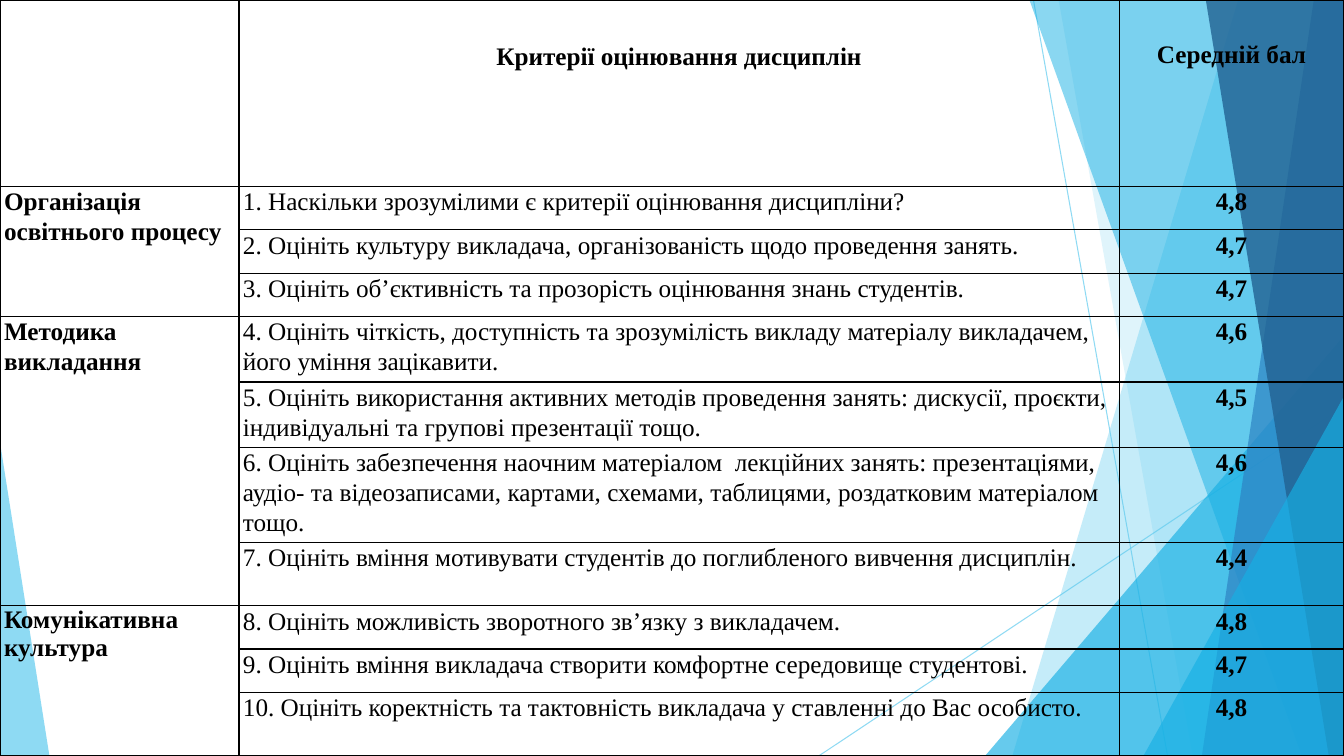
"""Build a slide with a table of average scores for teaching criteria."""
from lxml.etree import SubElement
from pptx import Presentation
from pptx.dml.color import RGBColor
from pptx.enum.shapes import MSO_CONNECTOR, MSO_SHAPE
from pptx.enum.text import PP_ALIGN
from pptx.oxml import parse_xml
from pptx.oxml.ns import nsdecls, qn
from pptx.util import Pt

PX = 9144
WIDE, HIGH = 1333, 750
THEME = {
    "font": "Times New Roman", "size": Pt(18), "ink": "000000",
    "sky": "5FCBEF", "cyan": "17B0E4", "blue": "2E83C3", "navy": "226292",
}


def tint(part, fill, tone, alpha):
    fill.solid()
    fill.fore_color.rgb = RGBColor.from_string(THEME[tone])
    for color in part._element.iter(qn("a:srgbClr")):
        SubElement(color, qn("a:alpha"), val=str(alpha * 1000))


def write(cell, lines, bold=False, align=PP_ALIGN.LEFT, top=0, pitch=1.07, after=8):
    cell.margin_left = cell.margin_right = 4 * PX
    cell.margin_top, cell.margin_bottom = top * PX, 0
    cell.text = "\n".join(lines)
    paras = cell.text_frame.paragraphs
    for para in paras:
        para.alignment, para.line_spacing = align, pitch
        para.space_after = Pt(after if para is paras[-1] else 0)
        para.font.name, para.font.size = THEME["font"], THEME["size"]
        para.font.bold = bold
        para.font.color.rgb = RGBColor.from_string(THEME["ink"])


deck = Presentation()
deck.slide_width, deck.slide_height = WIDE * PX, HIGH * PX
slide = deck.slides.add_slide(deck.slide_layouts[6])
shapes = slide.shapes

for ends in [(1025, 0, 1158, HIGH), (WIDE, 403, 812, HIGH)]:
    line = shapes.add_connector(MSO_CONNECTOR.STRAIGHT, *[n * PX for n in ends])
    line.line.width = Pt(0.75)
    tint(line, line.line.fill, "sky", 70)
    SubElement(line._element.spPr, qn("a:effectLst"))

facets = [
    ("wedge", (1228, 1004), "sky", 36),
    ("wedge", (1050, 1183), "sky", 20),
    ("peak", (977, 333, 356, 1), "cyan", 66),
    ("wedge", (1021, 1291), "cyan", 50),
    ("wedge", (1303, 1192), "blue", 70),
    ("wedge", (1196, 1318), "navy", 80),
    ("peak", (1134, 393, 199, 1), "cyan", 66),
    ("peak", (0, 439, 49, 0), "sky", 70),
]
for kind, dims, tone, alpha in facets:
    if kind == "wedge":
        head, foot = dims
        path = shapes.build_freeform(head, 0, PX)
        path.add_line_segments([(WIDE, 0), (WIDE, HIGH), (foot, HIGH)])
        facet = path.convert_to_shape()
    else:
        left, top, width, apex = dims
        box = [n * PX for n in (left, top, width, HIGH - top)]
        facet = shapes.add_shape(MSO_SHAPE.ISOSCELES_TRIANGLE, *box)
        facet.adjustments[0] = apex
    facet.shadow.inherit = False
    facet.line.fill.background()
    tint(facet, facet.fill, tone, alpha)

groups = [
    (("Організація", "освітнього процесу"), 1.07, 8, [
        ("Наскільки зрозумілими є критерії оцінювання дисципліни?", "4,8"),
        ("Оцініть культуру викладача, організованість щодо проведення занять.", "4,7"),
        ("Оцініть об’єктивність та прозорість оцінювання знань студентів.", "4,7"),
    ]),
    (("Методика", "викладання"), 1.07, 8, [
        ("Оцініть чіткість, доступність та зрозумілість викладу матеріалу викладачем, "
         "його уміння зацікавити.", "4,6"),
        ("Оцініть використання активних методів проведення занять: дискусії, проєкти, "
         "індивідуальні та групові презентації тощо.", "4,5"),
        ("Оцініть забезпечення наочним матеріалом  лекційних занять: презентаціями, "
         "аудіо- та відеозаписами, картами, схемами, таблицями, роздатковим матеріалом "
         "тощо.", "4,6"),
        ("Оцініть вміння мотивувати студентів до поглибленого вивчення дисциплін.", "4,4"),
    ]),
    (("Комунікативна", "культура"), 1.0, 0, [
        ("Оцініть можливість зворотного зв’язку з викладачем.", "4,8"),
        ("Оцініть вміння викладача створити комфортне середовище студентові.", "4,7"),
        ("Оцініть коректність та тактовність викладача у ставленні до Вас особисто.", "4,8"),
    ]),
]
cols = [237, 873, 223]
rows = [185, 43, 43, 43, 65, 65, 94, 63, 43, 43, 63]
frame = shapes.add_table(len(rows), len(cols), 0, 0, WIDE * PX, HIGH * PX)
table = frame.table
table.first_row = table.horz_banding = False
for col, width in zip(table.columns, cols):
    col.width = width * PX
for row, height in zip(table.rows, rows):
    row.height = height * PX

for cell in table.iter_cells():
    write(cell, [""])
    cell.fill.background()
    for spot, side in enumerate("LRTB"):
        edge = parse_xml(
            f'<a:ln{side} {nsdecls("a")} w="{Pt(1)}"><a:solidFill>'
            f'<a:srgbClr val="{THEME["ink"]}"/></a:solidFill></a:ln{side}>')
        cell._tc.get_or_add_tcPr().insert(spot, edge)

write(table.cell(0, 1), ["Критерії оцінювання дисциплін"], True, PP_ALIGN.CENTER, 41)
write(table.cell(0, 2), ["Середній бал"], True, PP_ALIGN.CENTER, 39)
index = 1
for title, pitch, after, items in groups:
    first = table.cell(index, 0)
    first.merge(table.cell(index + len(items) - 1, 0))
    write(first, title, True, pitch=pitch, after=after)
    for text, score in items:
        write(table.cell(index, 1), [f"{index}. {text}"])
        write(table.cell(index, 2), [score], True, PP_ALIGN.CENTER)
        index += 1

deck.save("out.pptx")
